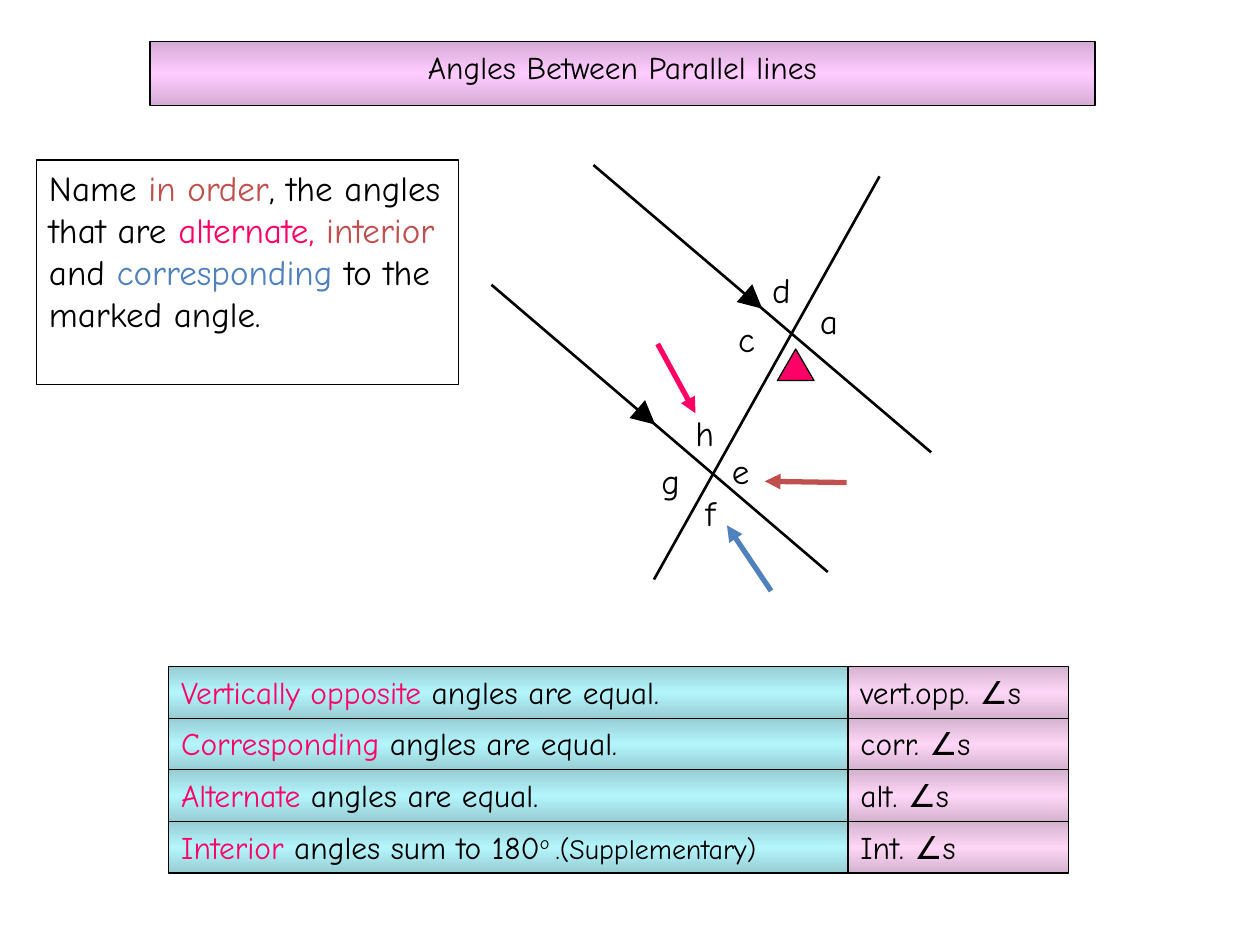
import copy
from dataclasses import dataclass

import pptx
import pptx.dml.color
import pptx.enum.shapes
import pptx.enum.text
import pptx.oxml
import pptx.oxml.ns
import pptx.util

Inches = pptx.util.Inches
Pt = pptx.util.Pt
MSO_SHAPE = pptx.enum.shapes.MSO_SHAPE
PP_ALIGN = pptx.enum.text.PP_ALIGN

FONT = "Comic Neue"
COLOURS = {
    "black": "000000",
    "pink": "FF0066",
    "red": "C0504D",
    "blue": "4F81BD",
}
GRADIENTS = {
    "title": ("D5ABD5", "FFCCFF"),
    "rule": ("97CDD3", "B4F5FC"),
    "reason": ("D4B3CF", "FED6F7"),
}


@dataclass(frozen=True)
class Words:
    text: str
    colour: str = "black"
    size: float = 18
    raised: bool = False


@dataclass(frozen=True)
class Stroke:
    start: tuple[float, float]
    end: tuple[float, float]
    colour: str = "black"
    width: float = 1.5
    arrow: bool = False


@dataclass(frozen=True)
class AngleLabel:
    letter: str
    left: float
    top: float


@dataclass(frozen=True)
class AngleRule:
    statement: tuple[Words, ...]
    reason: str


STROKES = (
    Stroke((4.71, 1.31), (7.39, 3.59)),
    Stroke((3.9, 2.26), (6.57, 4.54)),
    Stroke((5.97, 2.38), (6.05, 2.45), width=4.5, arrow=True),
    Stroke((5.12, 3.3), (5.2, 3.37), width=4.5, arrow=True),
    Stroke((5.22, 2.73), (5.52, 3.28), "pink", 3, True),
    Stroke((6.72, 3.83), (6.07, 3.82), "red", 3, True),
    Stroke((6.12, 4.69), (5.77, 4.17), "blue", 3, True),
)
ANGLE_LABELS = (
    AngleLabel("a", 6.41, 2.33),
    AngleLabel("f", 5.5, 3.85),
    AngleLabel("e", 5.71, 3.52),
    AngleLabel("h", 5.42, 3.22),
    AngleLabel("g", 5.15, 3.6),
    AngleLabel("d", 6.03, 2.08),
    AngleLabel("c", 5.76, 2.47),
)
ANGLE_RULES = (
    AngleRule((Words("Vertically opposite", "pink"), Words(" angles are equal.")), "vert.opp. ∠s"),
    AngleRule((Words("Corresponding", "pink"), Words(" angles are equal.")), "corr. ∠s"),
    AngleRule((Words("Alternate ", "pink"), Words("angles are equal.")), "alt. ∠s"),
    AngleRule(
        (
            Words("Interior ", "pink"),
            Words("angles sum to 180"),
            Words("o ", raised=True),
            Words(".(Supplementary)", size=16),
        ),
        "Int. ∠s",
    ),
)
QUESTION = (
    Words("Name ", size=20),
    Words("in order", "red", 20),
    Words(", the angles that are ", size=20),
    Words("alternate, ", "pink", 20),
    Words("interior", "red", 20),
    Words(" and ", size=20),
    Words("corresponding", "blue", 20),
    Words(" to the marked angle.", size=20),
)


def rgb(value: str) -> pptx.dml.color.RGBColor:
    return pptx.dml.color.RGBColor.from_string(value)


def write(shape, words: tuple[Words, ...], align=PP_ALIGN.LEFT) -> None:
    frame = shape.text_frame
    frame.word_wrap = True
    frame.vertical_anchor = pptx.enum.text.MSO_ANCHOR.TOP
    paragraph = frame.paragraphs[0]
    paragraph.alignment = align
    for part in words:
        run = paragraph.add_run()
        run.text = part.text
        run.font.name = FONT
        run.font.size = Pt(part.size)
        run.font.color.rgb = rgb(COLOURS[part.colour])
        if part.raised:
            run.font._element.set("baseline", "30000")


def outline(shape, width: float = 0.75) -> None:
    shape.shadow.inherit = False
    shape.line.color.rgb = rgb(COLOURS["black"])
    shape.line.width = Pt(width)


def shade(shape, gradient: str) -> None:
    edge, middle = GRADIENTS[gradient]
    shape.fill.gradient()
    shape.fill.gradient_angle = 270
    first = shape._element.spPr.find(".//" + pptx.oxml.ns.qn("a:gs"))
    first.addnext(copy.deepcopy(first))
    for stop, position, colour in zip(shape.fill.gradient_stops, (0, 0.5, 1), (edge, middle, edge)):
        stop.position = position
        stop.color.rgb = rgb(colour)


def add_panel(slide, left: float, top: float, width: float, height: float,
              words: tuple[Words, ...], gradient: str = "", align=PP_ALIGN.LEFT) -> None:
    panel = slide.shapes.add_shape(
        MSO_SHAPE.RECTANGLE, Inches(left), Inches(top), Inches(width), Inches(height))
    outline(panel)
    if gradient:
        shade(panel, gradient)
    else:
        panel.fill.background()
    write(panel, words, align)


def add_stroke(slide, stroke: Stroke) -> None:
    line = slide.shapes.add_connector(
        pptx.enum.shapes.MSO_CONNECTOR.STRAIGHT,
        *(Inches(value) for value in stroke.start + stroke.end))
    line.line.color.rgb = rgb(COLOURS[stroke.colour])
    line.line.width = Pt(stroke.width)
    properties = line._element.spPr
    if stroke.arrow:
        head = pptx.oxml.ns.qn("a:tailEnd")
        properties.find(pptx.oxml.ns.qn("a:ln")).makeelement(head, {})
        tail = pptx.oxml.parse_xml(f'<a:tailEnd {pptx.oxml.ns.nsdecls("a")} type="triangle"/>')
        properties.find(pptx.oxml.ns.qn("a:ln")).append(tail)
    properties.append(pptx.oxml.parse_xml(f'<a:effectLst {pptx.oxml.ns.nsdecls("a")}/>'))


def add_angle_label(slide, label: AngleLabel) -> None:
    box = slide.shapes.add_textbox(
        Inches(label.left), Inches(label.top), Inches(0.43), Inches(0.43))
    write(box, (Words(label.letter, size=20),))


def add_transversal(slide) -> None:
    builder = slide.shapes.build_freeform(Inches(5.19), Inches(4.6))
    builder.add_line_segments([(Inches(6.98), Inches(1.4))], close=False)
    transversal = builder.convert_to_shape()
    transversal.fill.background()
    outline(transversal, 1.5)


def add_angle_marker(slide) -> None:
    marker = slide.shapes.add_shape(
        MSO_SHAPE.ISOSCELES_TRIANGLE, Inches(6.17), Inches(2.77), Inches(0.29), Inches(0.25))
    marker.fill.solid()
    marker.fill.fore_color.rgb = rgb(COLOURS["pink"])
    outline(marker)


def main() -> None:
    """Build the slide on angles between parallel lines."""
    deck = pptx.Presentation()
    deck.slide_width, deck.slide_height = Inches(10), Inches(7.5)
    slide = deck.slides.add_slide(deck.slide_layouts[6])
    add_panel(slide, 1.19, 0.33, 7.5, 0.51, (Words("Angles Between Parallel lines"),),
              "title", PP_ALIGN.CENTER)
    add_panel(slide, 0.29, 1.27, 3.35, 1.78, QUESTION)
    for stroke in STROKES:
        add_stroke(slide, stroke)
    add_transversal(slide)
    add_angle_marker(slide)
    for label in ANGLE_LABELS:
        add_angle_label(slide, label)
    for row, rule in enumerate(ANGLE_RULES):
        top = 5.29 + row * 0.41
        add_panel(slide, 1.34, top, 5.4, 0.41, rule.statement, "rule")
        add_panel(slide, 6.73, top, 1.75, 0.41, (Words(rule.reason),), "reason")
    deck.save("out.pptx")


if __name__ == "__main__":
    main()
